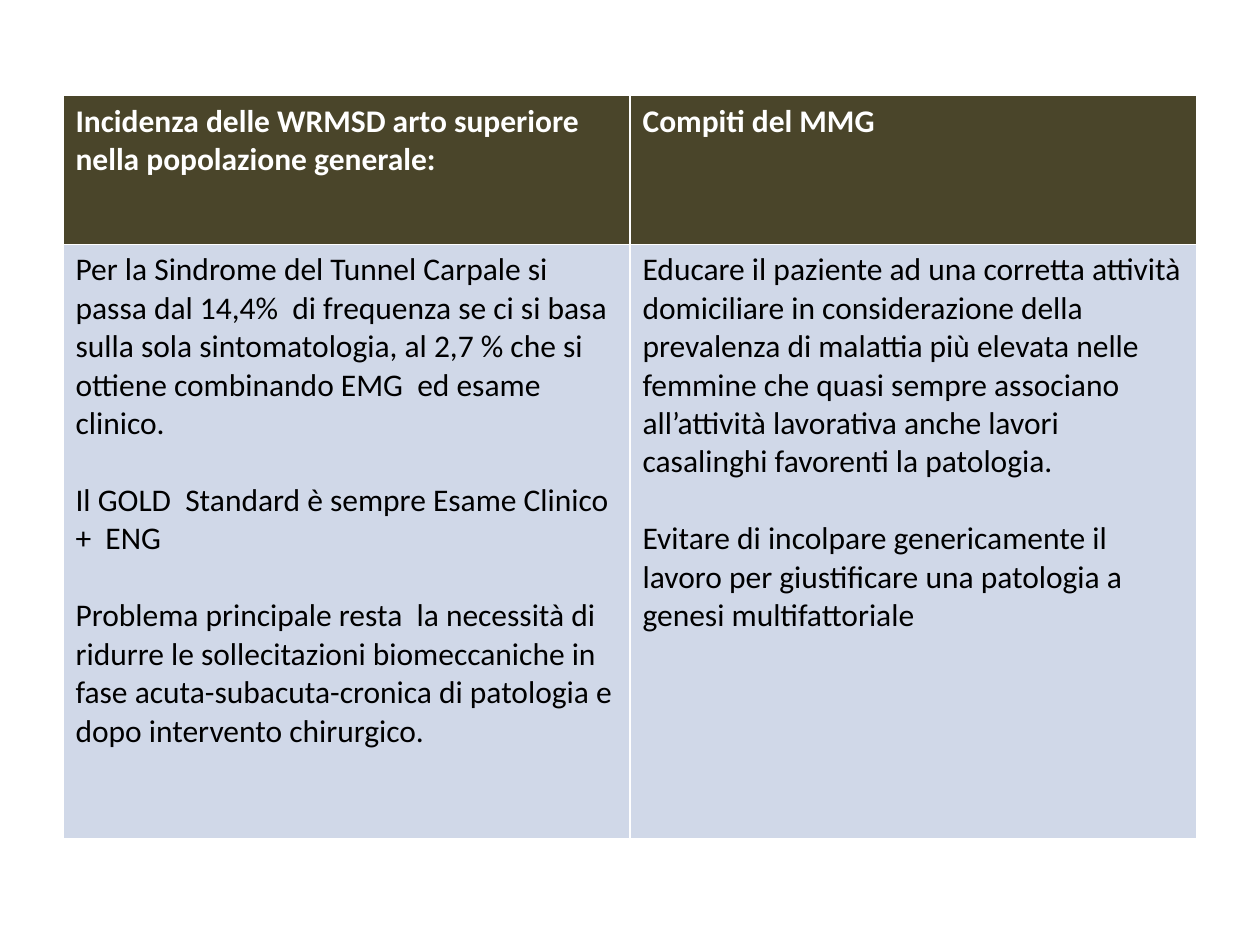
from pptx import Presentation
from pptx.dml.color import RGBColor
from pptx.util import Inches, Pt

WHITE = RGBColor(0xFF, 0xFF, 0xFF)
BLACK = RGBColor(0x00, 0x00, 0x00)
OLIVE = RGBColor(0x4A, 0x45, 0x2A)
PALE_BLUE = RGBColor(0xD0, 0xD8, 0xE8)

COLUMNS = [
    (
        "Incidenza delle WRMSD arto superiore nella popolazione generale:",
        [
            "Per la Sindrome del Tunnel Carpale si passa dal 14,4%  di frequenza se ci si basa "
            "sulla sola sintomatologia, al 2,7 % che si ottiene combinando EMG  ed esame clinico.",
            "Il GOLD  Standard è sempre Esame Clinico +  ENG",
            "Problema principale resta  la necessità di ridurre le sollecitazioni biomeccaniche "
            "in fase acuta-subacuta-cronica di patologia e dopo intervento chirurgico.",
        ],
    ),
    (
        "Compiti del MMG",
        [
            "Educare il paziente ad una corretta attività domiciliare in considerazione della "
            "prevalenza di malattia più elevata nelle femmine che quasi sempre associano "
            "all’attività lavorativa anche lavori casalinghi favorenti la patologia.",
            "Evitare di incolpare genericamente il lavoro per giustificare una patologia a "
            "genesi multifattoriale",
        ],
    ),
]


def write_cell(cell, paragraphs, fill, color, bold=False, size=18, gap=22):
    cell.fill.solid()
    cell.fill.fore_color.rgb = fill
    frame = cell.text_frame
    for index, text in enumerate(paragraphs):
        paragraph = frame.add_paragraph() if index else frame.paragraphs[0]
        paragraph.space_before = Pt(gap if index else 0)
        run = paragraph.add_run()
        run.text = text
        run.font.name = "Calibri"
        run.font.size = Pt(size)
        run.font.bold = bold
        run.font.color.rgb = color


prs = Presentation()
prs.slide_width = Inches(10)
prs.slide_height = Inches(7.5)
slide = prs.slides.add_slide(prs.slide_layouts[6])

duties = slide.shapes.add_table(
    2, len(COLUMNS), Inches(0.5), Inches(0.76), Inches(9), Inches(5.9)
).table
duties.rows[0].height = Inches(1.18)
duties.rows[1].height = Inches(4.72)

for column, (heading, body) in enumerate(COLUMNS):
    duties.columns[column].width = Inches(4.5)
    write_cell(duties.cell(0, column), [heading], fill=OLIVE, color=WHITE, bold=True)
    write_cell(duties.cell(1, column), body, fill=PALE_BLUE, color=BLACK)

prs.save("out.pptx")
